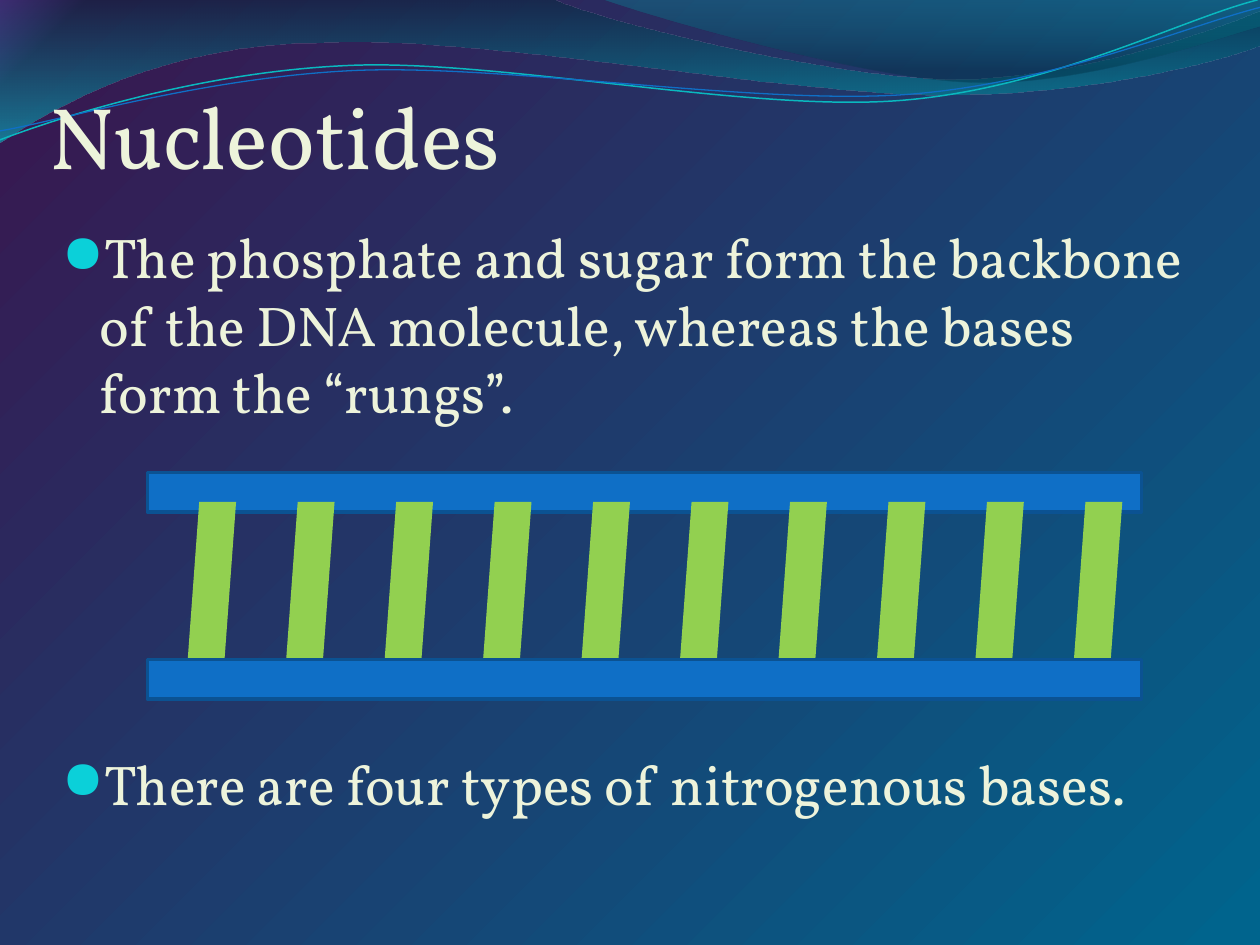
from lxml import etree
from pptx import Presentation
from pptx.dml.color import RGBColor
from pptx.enum.shapes import MSO_SHAPE
from pptx.enum.text import MSO_ANCHOR, MSO_AUTO_SIZE, PP_ALIGN
from pptx.oxml.ns import qn
from pptx.util import Cm, Pt

RECTANGLE, PARALLELOGRAM = MSO_SHAPE.RECTANGLE, MSO_SHAPE.PARALLELOGRAM
TOP, BOTTOM = MSO_ANCHOR.TOP, MSO_ANCHOR.BOTTOM
LEFT = PP_ALIGN.LEFT
NO_AUTOFIT = MSO_AUTO_SIZE.NONE

CREAM = RGBColor(0xED, 0xF3, 0xDB)
BLUE = RGBColor(0x0F, 0x6F, 0xC6)
DARK_BLUE = RGBColor(0x0B, 0x52, 0x92)
GREEN = RGBColor(0x92, 0xD0, 0x50)
CYAN = RGBColor(0x0B, 0xD0, 0xD9)
TEAL = RGBColor(0x0A, 0xB8, 0xBF)

# Gradient stops: position %, colour, opacity %
BACKDROP = [(0, RGBColor(0x70, 0x30, 0xA0), 100),
            (4, RGBColor(0x38, 0x18, 0x50), 100),
            (99, RGBColor(0x00, 0x64, 0x8D), 100),
            (100, RGBColor(0x00, 0x64, 0x8D), 100)]
WIDE_WAVE = [(0, RGBColor(0x00, 0x2B, 0x3C), 45),
             (100, RGBColor(0x00, 0xC6, 0xCF), 55)]
RIGHT_WAVE = [(0, RGBColor(0x00, 0xA1, 0xA9), 30),
              (80, RGBColor(0x00, 0x33, 0x47), 45)]

# Outlines in cm: a start, then one point for a line or three for a curve
WIDE_OUTLINE = [
    [(0, 0)],
    [(11.18, 0)],
    [(12.09, 0.43), (16.87, 1.6), (19.25, 1.6)],
    [(21.67, 1.6), (24.33, 0.66), (25.4, 0.23)],
    [(25.4, 0.91)],
    [(24.97, 1.12), (22.1, 1.93), (18.95, 1.91)],
    [(15.8, 1.91), (9.7, 0.71), (6.53, 0.86)],
    [(3.28, 0.89), (1.17, 2.11), (0, 2.87)]]
RIGHT_OUTLINE = [
    [(12.17, 0)],
    [(12.93, 0.28), (17.32, 1.57), (19.53, 1.65)],
    [(21.74, 1.75), (24.41, 0.81), (25.4, 0.53)],
    [(25.4, 0)]]
TEAL_STRAND = [
    [(0, 2.82)],
    [(1.22, 2.36), (4.01, 1.45), (7.04, 1.32)],
    [(10.03, 1.19), (15.06, 2.26), (18.11, 2.03)],
    [(21.16, 1.8), (23.83, 0.38), (25.35, 0)]]
BLUE_STRAND = [
    [(0, 2.64)],
    [(1.19, 2.44), (4.17, 1.55), (7.19, 1.42)],
    [(10.24, 1.3), (15.16, 2.11), (18.21, 1.91)],
    [(21.23, 1.7), (23.9, 0.53), (25.4, 0.15)]]


class SlideBuilder:
    font = "Vollkorn"
    ink = CREAM

    def __init__(self, slide):
        self.slide = slide
        self.shapes = slide.shapes

    def gradient(self, fill, element, stops, angle):
        fill.gradient()
        gradient = element.find(".//" + qn("a:gradFill"))
        stop_list = gradient.find(qn("a:gsLst"))
        for stop in list(stop_list):
            stop_list.remove(stop)
        for position, colour, opacity in stops:
            stop = etree.SubElement(stop_list, qn("a:gs"), pos=str(position * 1000))
            rgb = etree.SubElement(stop, qn("a:srgbClr"), val=str(colour))
            if opacity < 100:
                etree.SubElement(rgb, qn("a:alpha"), val=str(opacity * 1000))
        gradient.find(qn("a:lin")).set("ang", str(angle * 60000))

    def backdrop(self, stops, angle):
        self.gradient(self.slide.background.fill, self.slide.element, stops, angle)

    def freeform(self, outline, close):
        start, *rest = [(Cm(x), Cm(y)) for segment in outline for x, y in segment]
        builder = self.shapes.build_freeform(*start)
        builder.add_line_segments(rest, close=close)
        shape = builder.convert_to_shape()
        shape.shadow.inherit = False
        # Join each three control points into one Bezier curve
        lines = iter(shape.element.findall(".//" + qn("a:lnTo")))
        for segment in outline[1:]:
            steps = [next(lines) for _ in segment]
            if len(steps) == 3:
                curve = etree.Element(qn("a:cubicBezTo"))
                steps[0].addprevious(curve)
                for step in steps:
                    curve.append(step[0])
                    step.getparent().remove(step)
        return shape

    def wave(self, outline, stops):
        wave = self.freeform(outline, True)
        wave.line.fill.background()
        self.gradient(wave.fill, wave.element, stops, 90)

    def strand(self, outline, colour, width):
        strand = self.freeform(outline, False)
        strand.fill.background()
        strand.line.color.rgb = colour
        strand.line.width = Pt(width)

    def block(self, kind, left, top, width, height, fill, line=None):
        block = self.shapes.add_shape(kind, Cm(left), Cm(top), Cm(width), Cm(height))
        block.shadow.inherit = False
        block.fill.solid()
        block.fill.fore_color.rgb = fill
        if line is None:
            block.line.fill.background()
        else:
            block.line.color.rgb = line
            block.line.width = Pt(2)

    def style(self, paragraph, size):
        paragraph.alignment = LEFT
        for run in paragraph.runs:
            run.font.name = self.font
            run.font.size = Pt(size)
            run.font.color.rgb = self.ink

    def title(self, text, left, top, width, height):
        title = self.shapes.title
        title.left, title.top, title.width, title.height = map(Cm, (left, top, width, height))
        frame = title.text_frame
        frame.text = text
        frame.auto_size = NO_AUTOFIT
        frame.vertical_anchor = BOTTOM
        frame.margin_left = frame.margin_right = frame.margin_bottom = 0
        self.style(frame.paragraphs[0], 50)
        self.shapes.element.append(title.element)  # in front of the waves

    def bullets(self, points, left, top, width, height):
        frame = self.shapes.add_textbox(Cm(left), Cm(top), Cm(width), Cm(height)).text_frame
        frame.word_wrap = True
        frame.vertical_anchor = TOP
        frame.text = "\n".join(text for text, _ in points)
        for paragraph, (_, space_before) in zip(frame.paragraphs, points):
            self.style(paragraph, 32)
            paragraph.space_before = Pt(space_before)
            properties = paragraph._p.get_or_add_pPr()
            properties.set("marL", str(Cm(0.76)))
            properties.set("indent", str(-Cm(0.76)))
            colour = etree.SubElement(properties, qn("a:buClr"))
            etree.SubElement(colour, qn("a:srgbClr"), val=str(CYAN))
            etree.SubElement(properties, qn("a:buSzPct"), val="95000")
            etree.SubElement(properties, qn("a:buFont"), typeface="OpenSymbol")
            etree.SubElement(properties, qn("a:buChar"), char="●")


def main():
    deck = Presentation()
    deck.slide_width, deck.slide_height = Cm(25.4), Cm(19.05)
    page = SlideBuilder(deck.slides.add_slide(deck.slide_layouts[5]))

    # Background and waves
    page.backdrop(BACKDROP, 45)
    page.wave(WIDE_OUTLINE, WIDE_WAVE)
    page.wave(RIGHT_OUTLINE, RIGHT_WAVE)
    page.strand(TEAL_STRAND, TEAL, 0.85)
    page.strand(BLUE_STRAND, BLUE, 0.75)

    # Title and text; the gap between the points leaves room for the ladder
    page.title("Nucleotides", 1, 0.6, 22.86, 3.18)
    page.bullets([
        ("The phosphate and sugar form the backbone of the DNA molecule, "
         "whereas the bases form the “rungs”.", 6.4),
        ("There are four types of nitrogenous bases.", 185.8),
    ], 1, 4.37, 23.42, 13.69)

    # DNA ladder: rungs lie between the two backbones
    backbone_left, backbone_width, backbone_height = 2.97, 20.04, 0.79
    page.block(RECTANGLE, backbone_left, 9.53, backbone_width, backbone_height, BLUE, DARK_BLUE)
    for rung in range(10):
        page.block(PARALLELOGRAM, 3.77 + rung * 1.985, 10.12, 0.99, 3.38, GREEN)
    page.block(RECTANGLE, backbone_left, 13.3, backbone_width, backbone_height, BLUE, DARK_BLUE)

    deck.save("out.pptx")


if __name__ == "__main__":
    main()
